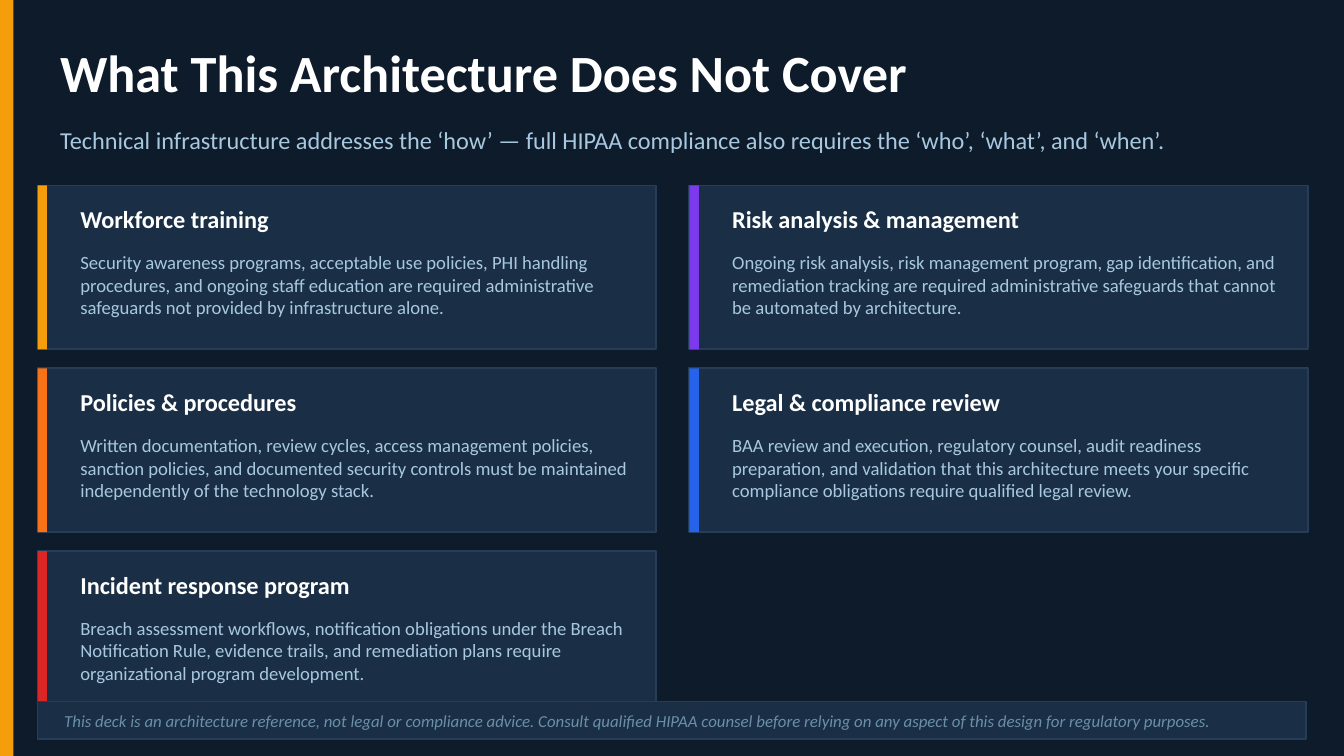
from pptx import Presentation
from pptx.dml.color import RGBColor
from pptx.enum.shapes import MSO_SHAPE
from pptx.enum.text import MSO_ANCHOR
from pptx.util import Emu, Pt

PX = 4572  # EMU per px, 200 px to the inch
SLIDE_WIDTH, SLIDE_HEIGHT = 2000, 1125

COLORS = {
    "background": "0D1B2A",
    "panel": "1A2F45",
    "border": "263D58",
    "white": "FFFFFF",
    "pale": "A8C8E0",
    "muted": "6B8FA8",
    "amber": "F59E0B",
    "orange": "F97316",
    "red": "DC2626",
    "violet": "7C3AED",
    "blue": "2563EB",
}

FORMATS = {
    "title": ("white", {"size": Pt(28), "bold": True}),
    "subtitle": ("pale", {"size": Pt(13)}),
    "heading": ("white", {"size": Pt(13), "bold": True}),
    "body": ("pale", {"size": Pt(10)}),
    "disclaimer": ("muted", {"size": Pt(9), "italic": True}),
}

CARD_COLUMNS = [
    [
        ("amber", "Workforce training",
         "Security awareness programs, acceptable use policies, PHI handling procedures, and "
         "ongoing staff education are required administrative safeguards not provided by "
         "infrastructure alone."),
        ("orange", "Policies & procedures",
         "Written documentation, review cycles, access management policies, sanction policies, "
         "and documented security controls must be maintained independently of the technology "
         "stack."),
        ("red", "Incident response program",
         "Breach assessment workflows, notification obligations under the Breach Notification "
         "Rule, evidence trails, and remediation plans require organizational program "
         "development."),
    ],
    [
        ("violet", "Risk analysis & management",
         "Ongoing risk analysis, risk management program, gap identification, and remediation "
         "tracking are required administrative safeguards that cannot be automated by "
         "architecture."),
        ("blue", "Legal & compliance review",
         "BAA review and execution, regulatory counsel, audit readiness preparation, and "
         "validation that this architecture meets your specific compliance obligations require "
         "qualified legal review."),
    ],
]


def color(name):
    return RGBColor.from_string(COLORS[name])


def to_emu(*lengths):
    return [Emu(length * PX) for length in lengths]


def add_block(slide, box, fill, border=None):
    block = slide.shapes.add_shape(MSO_SHAPE.RECTANGLE, *to_emu(*box))
    block.shadow.inherit = False
    block.fill.solid()
    block.fill.fore_color.rgb = color(fill)
    if border:
        block.line.color.rgb = color(border)
        block.line.width = Pt(1)
    else:
        block.line.fill.background()


def add_text(slide, box, words, style, anchor=MSO_ANCHOR.MIDDLE):
    frame = slide.shapes.add_textbox(*to_emu(*box)).text_frame
    frame.word_wrap = True
    frame.vertical_anchor = anchor
    run = frame.paragraphs[0].add_run()
    run.text = words
    ink, font_values = FORMATS[style]
    for attribute, value in {"name": "Calibri", **font_values}.items():
        setattr(run.font, attribute, value)
    run.font.color.rgb = color(ink)


def add_header(slide, left, top, width):
    add_text(slide, (left, top, width, 124), "What This Architecture Does Not Cover", "title")
    add_text(slide, (left, top + 128, width, 72),
             "Technical infrastructure addresses the ‘how’ — full HIPAA compliance also "
             "requires the ‘who’, ‘what’, and ‘when’.", "subtitle")


def add_card(slide, left, top, width, height, accent, heading, body):
    add_block(slide, (left, top, width, height), "panel", "border")
    add_block(slide, (left, top, 14, height), accent)
    text_left, text_width = left + 44, width - 68
    add_text(slide, (text_left, top + 20, text_width, 60), heading, "heading")
    add_text(slide, (text_left, top + 88, text_width, height - 108), body, "body",
             MSO_ANCHOR.TOP)


def add_card_grid(slide, left, top, card_width=920, card_height=244, gap_x=50, gap_y=28):
    for column, cards in enumerate(CARD_COLUMNS):
        for row, card in enumerate(cards):
            add_card(slide, left + column * (card_width + gap_x),
                     top + row * (card_height + gap_y), card_width, card_height, *card)


def add_disclaimer(slide, left, top, width, height):
    add_block(slide, (left, top, width, height), "panel", "border")
    add_text(slide, (left + 20, top, width - 40, height),
             "This deck is an architecture reference, not legal or compliance advice. Consult "
             "qualified HIPAA counsel before relying on any aspect of this design for "
             "regulatory purposes.", "disclaimer")


def build_scope_slide(deck):
    slide = deck.slides.add_slide(deck.slide_layouts[6])
    slide.background.fill.solid()
    slide.background.fill.fore_color.rgb = color("background")
    add_block(slide, (0, 0, 20, SLIDE_HEIGHT), "amber")
    add_header(slide, 70, 44, 1840)
    add_card_grid(slide, 56, 276)
    add_disclaimer(slide, 56, 1044, 1888, 56)


def main():
    deck = Presentation()
    deck.slide_width, deck.slide_height = to_emu(SLIDE_WIDTH, SLIDE_HEIGHT)
    build_scope_slide(deck)
    deck.save("out.pptx")


if __name__ == "__main__":
    main()
